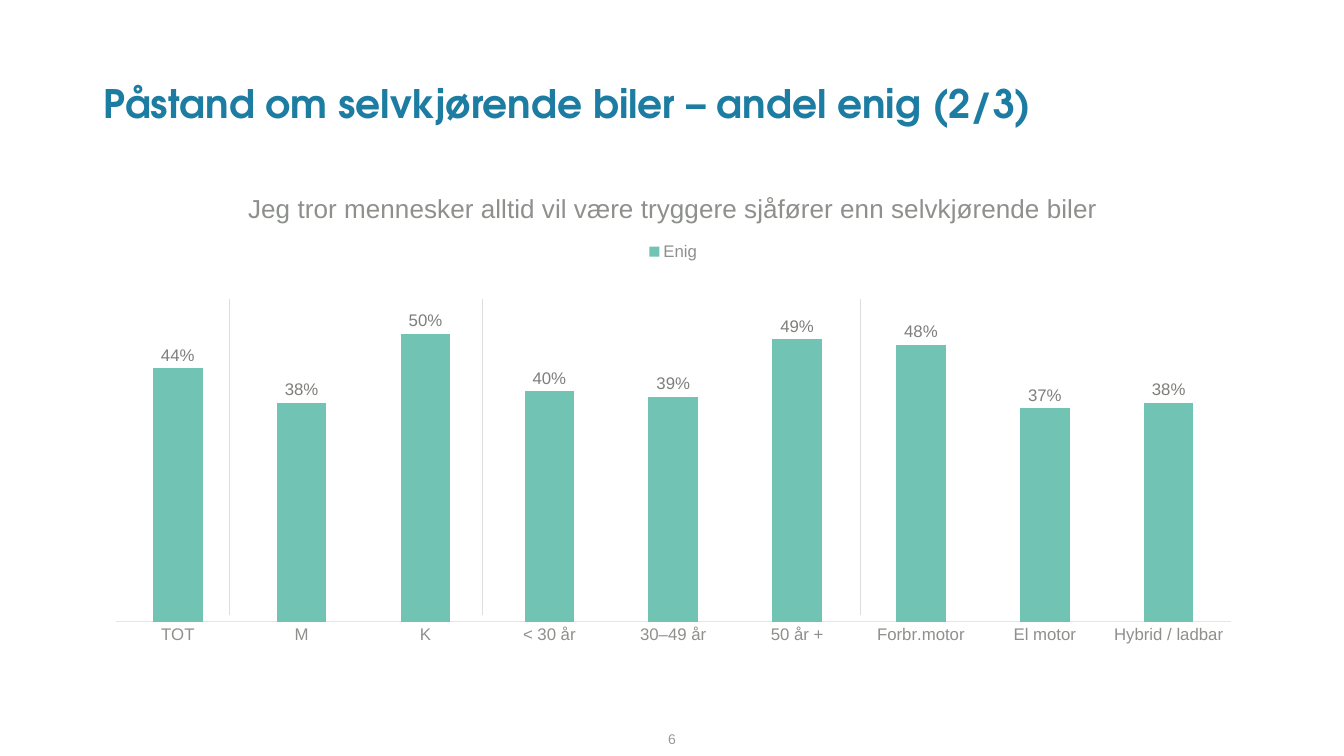
from lxml.etree import SubElement
from pptx import Presentation
from pptx.chart.data import CategoryChartData
from pptx.dml.color import RGBColor
from pptx.enum.chart import XL_CHART_TYPE, XL_LABEL_POSITION, XL_LEGEND_POSITION, XL_TICK_MARK
from pptx.enum.shapes import MSO_CONNECTOR
from pptx.enum.text import MSO_ANCHOR, MSO_AUTO_SIZE, PP_ALIGN
from pptx.oxml.ns import qn
from pptx.util import Pt

BLUE = RGBColor(0x1C, 0x7C, 0xA1)
TEAL = RGBColor(0x71, 0xC3, 0xB3)
AXIS_TEXT = RGBColor(0x8E, 0x90, 0x8C)
LABEL_TEXT = RGBColor(0x7C, 0x7F, 0x7B)
NUMBER_TEXT = RGBColor(0x98, 0x99, 0x98)
AXIS_LINE = RGBColor(0xE5, 0xE5, 0xE4)
DIVIDER = RGBColor(0xDC, 0xDD, 0xDC)

AGREE = {
    "TOT": 0.44, "M": 0.38, "K": 0.50,
    "< 30 år": 0.40, "30–49 år": 0.39, "50 år +": 0.49,
    "Forbr.motor": 0.48, "El motor": 0.37, "Hybrid / ladbar": 0.38,
}


def set_font(font, size, color, name="Arial", bold=False):
    font.name, font.size, font.bold = name, Pt(size), bold
    font.color.rgb = color


def write(tf, text, anchor=MSO_ANCHOR.MIDDLE, align=PP_ALIGN.LEFT, spacing=1.0, **font):
    tf.word_wrap = True
    tf.auto_size = MSO_AUTO_SIZE.NONE
    tf.vertical_anchor = anchor
    p = tf.paragraphs[0]
    p.alignment, p.line_spacing = align, spacing
    r = p.add_run()
    r.text = text
    set_font(r.font, **font)


def add_title(slide, text, x, y, w, h):
    sp = slide.shapes.title
    sp.left, sp.top, sp.width, sp.height = Pt(x), Pt(y), Pt(w), Pt(h)
    write(sp.text_frame, text, anchor=MSO_ANCHOR.BOTTOM, spacing=0.9,
          size=28, color=BLUE, name="TeX Gyre Adventor", bold=True)


def add_page_number(slide, text, x, y, w, h):
    sp = slide.shapes.add_textbox(Pt(x), Pt(y), Pt(w), Pt(h))
    write(sp.text_frame, text, align=PP_ALIGN.CENTER, size=10, color=NUMBER_TEXT)


def set_plot_area(chart, x, y, w, h):
    """Fix the inner plot area as fractions of the chart frame."""
    plot_area = chart.plots[0]._element.getparent()
    layout = plot_area.find(qn("c:layout"))
    if layout is None:
        layout = SubElement(plot_area, qn("c:layout"))
        plot_area.insert(0, layout)
    manual = SubElement(layout, qn("c:manualLayout"))
    settings = [("layoutTarget", "inner"), ("xMode", "edge"), ("yMode", "edge"),
                ("x", x), ("y", y), ("w", w), ("h", h)]
    for tag, val in settings:
        SubElement(manual, qn(f"c:{tag}")).set("val", str(val))


def add_agree_chart(slide, title, x, y, w, h):
    data = CategoryChartData(number_format="0%")
    data.categories = list(AGREE)
    data.add_series("Enig", list(AGREE.values()))
    chart = slide.shapes.add_chart(
        XL_CHART_TYPE.COLUMN_CLUSTERED, Pt(x), Pt(y), Pt(w), Pt(h), data).chart
    set_font(chart.font, 10, AXIS_TEXT)

    chart.has_title = True
    p = chart.chart_title.text_frame.paragraphs[0]
    r = p.add_run()
    r.text = title
    set_font(r.font, 18.6, AXIS_TEXT)
    chart.chart_title.include_in_layout = False

    chart.has_legend = True
    chart.legend.position = XL_LEGEND_POSITION.TOP
    chart.legend.include_in_layout = False
    set_font(chart.legend.font, 12, AXIS_TEXT)

    axis = chart.category_axis
    axis.major_tick_mark = axis.minor_tick_mark = XL_TICK_MARK.NONE
    axis.format.line.color.rgb = AXIS_LINE
    axis.format.line.width = Pt(0.75)
    set_font(axis.tick_labels.font, 12, AXIS_TEXT)

    scale = chart.value_axis
    scale.minimum_scale, scale.maximum_scale = 0, 0.6
    scale.has_major_gridlines = False
    scale.visible = False

    plot = chart.plots[0]
    plot.gap_width, plot.overlap = 150, -25
    plot.vary_by_categories = False
    fill = plot.series[0].format.fill
    fill.solid()
    fill.fore_color.rgb = TEAL
    plot.has_data_labels = True
    labels = plot.data_labels
    labels.show_value = True
    labels.number_format, labels.number_format_is_linked = "0%", False
    labels.position = XL_LABEL_POSITION.OUTSIDE_END
    set_font(labels.font, 12, LABEL_TEXT)
    set_plot_area(chart, 0.02, 0.217, 0.96, 0.718)


def add_dividers(slide, x, y, h, offsets):
    """Draw the vertical lines that separate the respondent groups."""
    for dx in offsets:
        line = slide.shapes.add_connector(
            MSO_CONNECTOR.STRAIGHT, Pt(x + dx), Pt(y), Pt(x + dx), Pt(y + h))
        line.line.color.rgb = DIVIDER
        line.line.width = Pt(0.5)
        SubElement(line._element.spPr, qn("a:effectLst"))


def main():
    prs = Presentation()
    prs.slide_width, prs.slide_height = Pt(960), Pt(540)
    slide = prs.slides.add_slide(prs.slide_layouts[5])
    add_title(slide, "Påstand om selvkjørende biler – andel enig (2/3)", 67, 28, 829.5, 66.3)
    add_page_number(slide, "6", 453, 515, 54, 25)
    add_agree_chart(
        slide, "Jeg tror mennesker alltid vil være tryggere sjåfører enn selvkjørende biler",
        66.2, 122.4, 829.5, 344.2)
    add_dividers(slide, 66.2, 213.3, 226.3, offsets=(98, 278.7, 548.7))
    prs.save("out.pptx")


if __name__ == "__main__":
    main()
